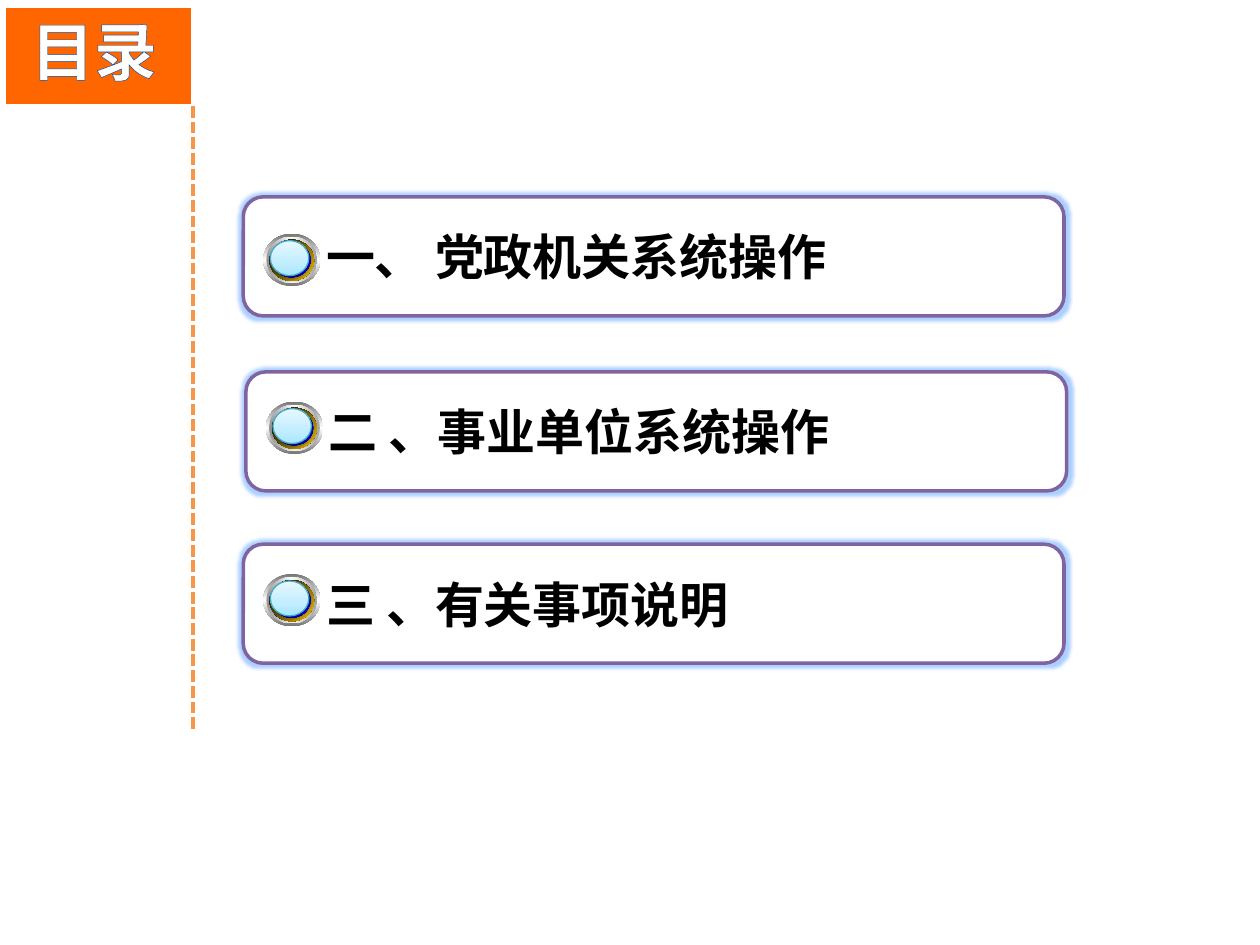
"""Build a contents slide with a title block and three numbered entries."""
import dataclasses

import lxml.etree
import pptx
import pptx.dml.color
import pptx.enum.dml
import pptx.enum.shapes
import pptx.enum.text
import pptx.oxml.ns
import pptx.util

Pt = pptx.util.Pt
Shape = pptx.enum.shapes.MSO_SHAPE


@dataclasses.dataclass(frozen=True)
class Theme:
    font: str = "Noto Sans CJK SC"
    title_size: float = 36
    entry_size: float = 28
    white: str = "FFFFFF"
    black: str = "000000"
    orange: str = "FF6600"
    divider: str = "F79646"
    purple: str = "8064A2"
    glow: str = "8FBFFF"
    title_outline: str = "054697"
    button_line: str = "46AAC5"
    silver: tuple = ((0, "767676"), (50, "FFFFFF"), (100, "767676"))
    steel: tuple = ((0, "A2A2A2"), (50, "FFFFFF"), (100, "A2A2A2"))
    shine: tuple = ((0, "FFFFFF"), (50, "0000FF"), (100, "FFFFFF"))
    gold: tuple = ((0, "000000"), (100, "FFCC00"))
    navy: tuple = ((0, "0000C3"), (50, "0000FF"), (100, "0000C3"))
    sky: tuple = ((0, "A7E6FF"), (35, "C1EDFF"), (100, "E7F8FF"))


def rgb(value):
    return pptx.dml.color.RGBColor.from_string(value)


def add_xml(parent, tag, **attributes):
    name = pptx.oxml.ns.qn(f"a:{tag}")
    return lxml.etree.SubElement(parent, name, {key: str(value) for key, value in attributes.items()})


def add_color(parent, color, opacity=100):
    node = add_xml(parent, "srgbClr", val=color)
    if opacity < 100:
        add_xml(node, "alpha", val=opacity * 1000)


class SlideBuilder:
    def __init__(self, slide, theme):
        self.slide = slide
        self.theme = theme

    def shape(self, shapes, kind, bounds, fill=None, line=None, width=1):
        item = shapes.add_shape(kind, *map(Pt, bounds))
        item.shadow.inherit = False
        if fill:
            item.fill.solid()
            item.fill.fore_color.rgb = rgb(fill)
        if line:
            item.line.color.rgb = rgb(line)
            item.line.width = Pt(width)
        else:
            item.line.fill.background()
        return item

    def effect(self, item, tag, color, opacity, **attributes):
        effects = item._element.spPr.find(pptx.oxml.ns.qn("a:effectLst"))
        add_color(add_xml(effects, tag, **attributes), color, opacity)

    def text(self, box, words, size, color, indent, anchor):
        frame = box.text_frame
        frame.word_wrap = True
        frame.margin_left = Pt(indent)
        frame.vertical_anchor = anchor
        para = frame.paragraphs[0]
        para.alignment = pptx.enum.text.PP_ALIGN.LEFT
        para.font.name = self.theme.font
        para.font.size = Pt(size)
        para.font.bold = True
        para.font.color.rgb = rgb(color)
        add_xml(para.font._element, "ea", typeface=self.theme.font)
        span = para.add_run()
        span.text = words
        return span

    def title(self, words, bounds):
        theme = self.theme
        box = self.shape(self.slide.shapes, Shape.RECTANGLE, bounds, theme.orange, theme.white, 2.25)
        top = pptx.enum.text.MSO_ANCHOR.TOP
        span = self.text(box, words, theme.title_size, theme.white, 15.5, top)
        outline = add_xml(span.font._element, "ln", w=Pt(1))
        add_color(add_xml(outline, "solidFill"), theme.title_outline)

    def divider(self, x, top, bottom):
        line = self.slide.shapes.add_connector(
            pptx.enum.shapes.MSO_CONNECTOR.STRAIGHT, Pt(x), Pt(top), Pt(x), Pt(bottom))
        line.line.color.rgb = rgb(self.theme.divider)
        line.line.width = Pt(2.25)
        line.line.dash_style = pptx.enum.dml.MSO_LINE.SQUARE_DOT
        add_xml(line._element.spPr, "effectLst")

    def disc(self, shapes, bounds, stops, angle, line=None):
        disc = self.shape(shapes, Shape.OVAL, bounds, line=line, width=0.75)
        disc.fill.gradient()
        gradient = disc._element.spPr.find(pptx.oxml.ns.qn("a:gradFill"))
        for child in list(gradient):
            gradient.remove(child)
        stop_list = add_xml(gradient, "gsLst")
        for position, color in stops:
            add_color(add_xml(stop_list, "gs", pos=position * 1000), color)
        add_xml(gradient, "lin", ang=angle * 60000, scaled=0)
        return disc

    def button(self, left, top):
        theme = self.theme
        shapes = self.slide.shapes.add_group_shape().shapes
        rings = (
            (0, 0, 32.5, 30, theme.silver, 90),
            (1.75, 1.75, 29, 26.5, theme.steel, 0),
            (3.5, 3.5, 25.5, 23.5, theme.shine, 45),
            (3.5, 3.5, 25.5, 23.5, theme.gold, 45),
            (5, 5, 22, 20, theme.navy, 315),
        )
        for x, y, width, height, stops, angle in rings:
            self.disc(shapes, (left + x, top + y, width, height), stops, angle)
        face = self.disc(shapes, (left + 4, top + 4, 22, 20), theme.sky, 270, theme.button_line)
        self.effect(face, "outerShdw", theme.black, 38, blurRad=Pt(3.1), dist=Pt(1.6),
                    dir=90 * 60000, rotWithShape=0)

    def entry(self, words, left, top, button_drop):
        theme = self.theme
        box = self.shape(self.slide.shapes, Shape.ROUNDED_RECTANGLE, (left, top, 469, 68),
                         theme.white, theme.purple, 2)
        self.effect(box, "glow", theme.glow, 75, rad=Pt(4))
        middle = pptx.enum.text.MSO_ANCHOR.MIDDLE
        self.text(box, words, theme.entry_size, theme.black, 44, middle)
        self.button(left + 11.5, top + button_drop)


def main():
    deck = pptx.Presentation()
    deck.slide_width, deck.slide_height = Pt(720), Pt(540)
    page = SlideBuilder(deck.slides.add_slide(deck.slide_layouts[6]), Theme())
    page.title("目录", (2.25, 3.5, 108, 57))
    page.divider(110.25, 60.5, 417.5)
    entries = (
        ("一、 党政机关系统操作", 139, 112.5, 21),
        ("二 、事业单位系统操作", 140.5, 212.5, 17),
        ("三 、有关事项说明", 139, 311, 17),
    )
    for entry in entries:
        page.entry(*entry)
    deck.save("out.pptx")


if __name__ == "__main__":
    main()
